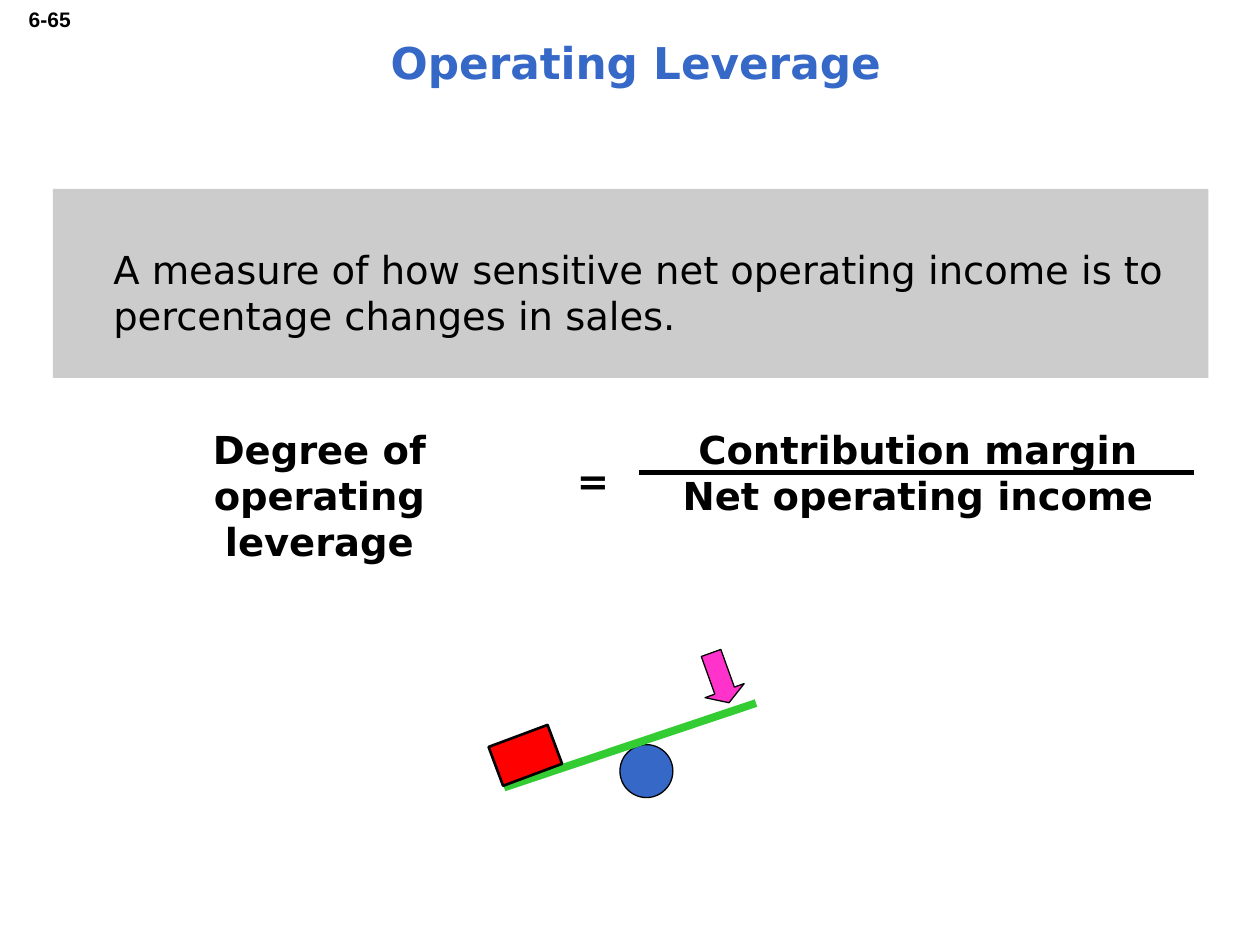
from dataclasses import dataclass

from lxml import etree
from pptx import Presentation
from pptx.dml.color import RGBColor
from pptx.enum import shapes, text
from pptx.oxml.ns import qn
from pptx.util import Inches, Pt


@dataclass(frozen=True)
class Theme:
    font: str = "DejaVu Sans"
    number_font: str = "Arial"
    black: str = "000000"
    blue: str = "3568C7"
    grey: str = "CCCCCC"
    green: str = "33CC33"
    red: str = "FF0000"
    pink: str = "FF33CC"
    number_size: int = 12
    title_size: int = 25
    body_size: int = 22


THEME = Theme()


@dataclass(frozen=True)
class Area:
    """A rectangle in inches."""
    left: float
    top: float
    width: float
    height: float

    def lengths(self) -> list:
        return [Inches(v) for v in (self.left, self.top, self.width, self.height)]


@dataclass(frozen=True)
class Figure:
    kind: shapes.MSO_SHAPE
    area: Area
    fill: str
    outline: float = 0.75
    rotation: float = 0
    adjustments: tuple = ()


@dataclass(frozen=True)
class Rule:
    start: tuple
    end: tuple
    color: str
    width: float


def add_text(page, area: Area, *lines: str, size: int = THEME.body_size,
             font: str = THEME.font, color: str = THEME.black, bold: bool = True,
             align=text.PP_ALIGN.CENTER, anchor=text.MSO_ANCHOR.TOP,
             wrap: bool = True, fill: str = "",
             inset_left: float = 0.1, inset_top: float = 0.05):
    box = page.shapes.add_textbox(*area.lengths())
    if fill:
        box.fill.solid()
        box.fill.fore_color.rgb = RGBColor.from_string(fill)
    frame = box.text_frame
    frame.word_wrap = wrap
    frame.vertical_anchor = anchor
    frame.margin_left, frame.margin_top = Inches(inset_left), Inches(inset_top)
    for index, line in enumerate(lines):
        para = frame.add_paragraph() if index else frame.paragraphs[0]
        para.alignment = align
        span = para.add_run()
        span.text = line
        span.font.name, span.font.size, span.font.bold = font, Pt(size), bold
        span.font.color.rgb = RGBColor.from_string(color)
    return box


def add_figure(page, figure: Figure):
    shape = page.shapes.add_shape(figure.kind, *figure.area.lengths())
    shape.shadow.inherit = False
    shape.rotation = figure.rotation
    for index, value in enumerate(figure.adjustments):
        shape.adjustments[index] = value
    shape.fill.solid()
    shape.fill.fore_color.rgb = RGBColor.from_string(figure.fill)
    shape.line.color.rgb = RGBColor.from_string(THEME.black)
    shape.line.width = Pt(figure.outline)
    return shape


def add_rule(page, rule: Rule):
    ends = [Inches(v) for v in (*rule.start, *rule.end)]
    line = page.shapes.add_connector(shapes.MSO_CONNECTOR.STRAIGHT, *ends)
    line.line.color.rgb = RGBColor.from_string(rule.color)
    line.line.width = Pt(rule.width)
    etree.SubElement(line._element.spPr, qn("a:effectLst"))
    return line


def add_seesaw(page):
    kinds = shapes.MSO_SHAPE
    fulcrum = Figure(kinds.OVAL, Area(4.92, 5.91, 0.42, 0.42), THEME.blue)
    plank = Rule((4, 6.25), (6, 5.58), THEME.green, 4.5)
    load = Figure(kinds.RECTANGLE, Area(3.92, 5.83, 0.5, 0.33), THEME.red,
                  outline=1.5, rotation=339.5)
    push = Figure(kinds.DOWN_ARROW, Area(5.55, 5.17, 0.33, 0.42), THEME.pink,
                  rotation=340.2, adjustments=(0.5, 0.31))
    add_figure(page, fulcrum)
    add_rule(page, plank)
    for figure in (load, push):
        add_figure(page, figure)


def add_formula(page):
    add_text(page, Area(5.28, 3.33, 4.01, 0.84),
             "Contribution margin", "Net operating income", wrap=False)
    add_text(page, Area(0.8, 3.33, 3.47, 0.84), "Degree of", "operating leverage")
    add_text(page, Area(4.48, 3.58, 0.47, 0.47), "=",
             align=text.PP_ALIGN.LEFT, wrap=False)
    add_rule(page, Rule((5.07, 3.75), (9.48, 3.75), THEME.black, 3))


def main():
    deck = Presentation()
    deck.slide_width, deck.slide_height = Inches(10), Inches(7.5)
    page = deck.slides.add_slide(deck.slide_layouts[6])
    add_text(page, Area(0.11, 0, 0.55, 0.3), "6-65", size=THEME.number_size,
             font=THEME.number_font, align=text.PP_ALIGN.RIGHT, wrap=False)
    add_text(page, Area(0.17, 0.08, 9.75, 0.83), "Operating Leverage",
             size=THEME.title_size, color=THEME.blue, anchor=text.MSO_ANCHOR.MIDDLE)
    add_text(page, Area(0.42, 1.5, 9.17, 1.5),
             "A measure of how sensitive net operating income is to "
             "percentage changes in sales.",
             bold=False, align=text.PP_ALIGN.LEFT, fill=THEME.grey,
             inset_left=0.48, inset_top=0.45)
    add_seesaw(page)
    add_formula(page)
    deck.save("out.pptx")


if __name__ == "__main__":
    main()
